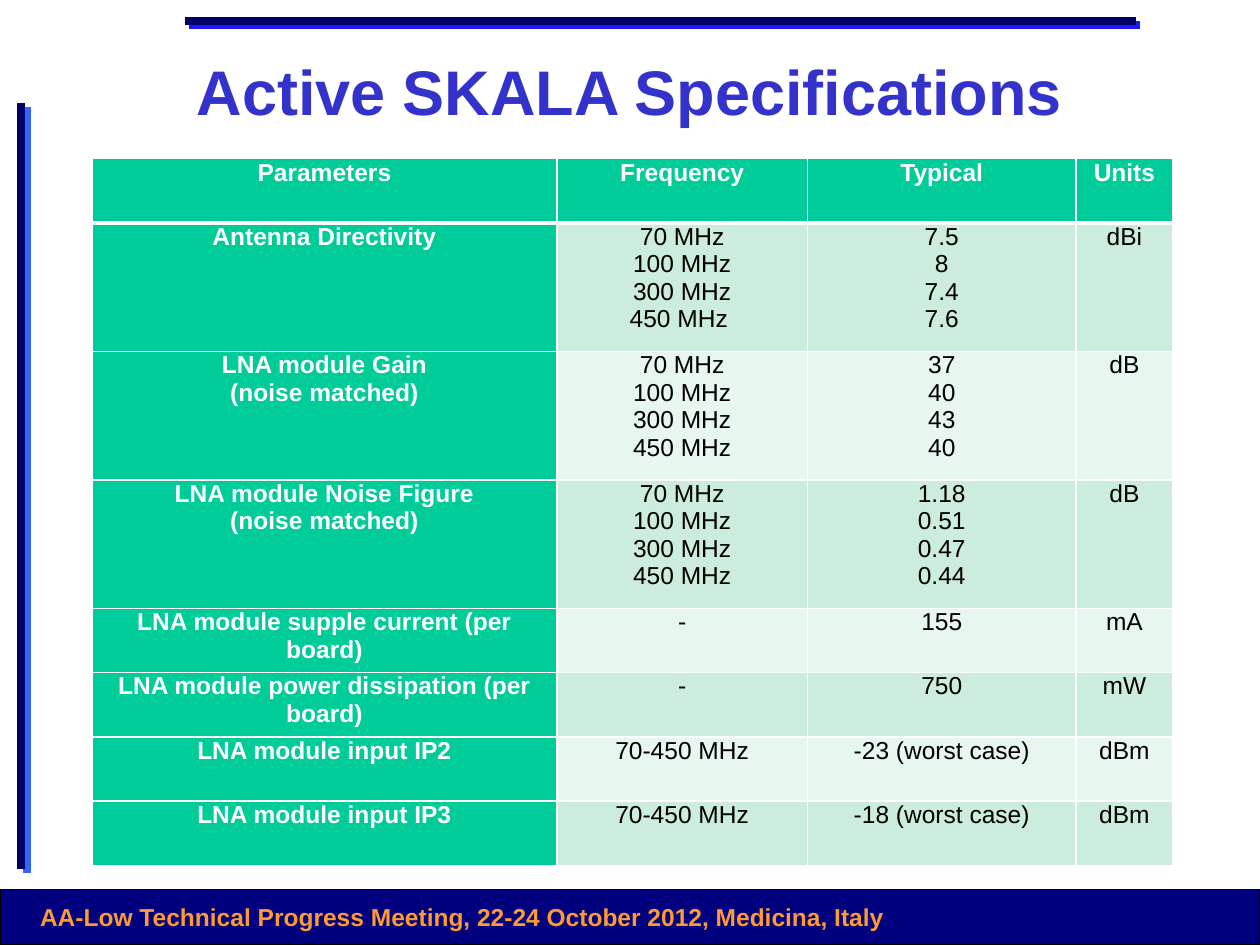
from dataclasses import dataclass

from lxml import etree
from pptx import Presentation
from pptx.dml.color import RGBColor
from pptx.enum.shapes import MSO_CONNECTOR, MSO_SHAPE
from pptx.enum.text import MSO_ANCHOR, PP_ALIGN
from pptx.oxml.ns import qn
from pptx.util import Inches, Pt

CENTER, LEFT = PP_ALIGN.CENTER, PP_ALIGN.LEFT
MIDDLE = MSO_ANCHOR.MIDDLE
RECT, STRAIGHT = MSO_SHAPE.RECTANGLE, MSO_CONNECTOR.STRAIGHT
FONT = "Arial"
WHITE, BLACK, GREEN = "FFFFFF", "000000", "00CC99"
BANDS = ("CCECDE", "E7F6EF")
COL_WIDTHS = (3.69, 1.99, 2.13, 0.77)
SHORT_ROW, TALL_ROW = 0.51, 1.02
FREQS = "70 MHz\n100 MHz\n300 MHz\n450 MHz"


@dataclass
class Rule:
    start: tuple[float, float]
    end: tuple[float, float]
    shadow: str
    dist: float
    angle: int


@dataclass
class Spec:
    parameter: str
    frequency: str
    typical: str
    units: str


RULES = [
    Rule((0.17, 0.82), (0.17, 6.9), "3366FF", 3.6, 34),
    Rule((9.02, 0.17), (1.47, 0.17), "1819FF", 2.8, 45),
]
SPECS = [
    Spec("Parameters", "Frequency", "Typical", "Units"),
    Spec("Antenna Directivity", FREQS + " ", "7.5\n8\n7.4\n7.6", "dBi"),
    Spec("LNA module Gain\n(noise matched)", FREQS, "37\n40\n43\n40", "dB"),
    Spec("LNA module Noise Figure\n(noise matched)", FREQS,
         "1.18\n0.51\n0.47\n0.44", "dB"),
    Spec("LNA module supple current (per board)", "-", "155", "mA"),
    Spec("LNA module power dissipation (per board)", "-", "750", "mW"),
    Spec("LNA module input IP2", "70-450 MHz", "-23 (worst case)", "dBm"),
    Spec("LNA module input IP3", "70-450 MHz", "-18 (worst case)", "dBm"),
]


def rgb(value: str) -> RGBColor:
    return RGBColor.from_string(value)


def set_text(tf, text: str, size: int, color: str, bold: bool, align=CENTER) -> None:
    tf.text = text
    for p in tf.paragraphs:
        p.alignment = align
        for r in p.runs:
            r.font.name = FONT
            r.font.size = Pt(size)
            r.font.bold = bold
            r.font.color.rgb = rgb(color)


def add_rule(slide, rule: Rule) -> None:
    ends = [Inches(v) for v in rule.start + rule.end]
    line = slide.shapes.add_connector(STRAIGHT, *ends)
    line.line.color.rgb = rgb("000066")
    line.line.width = Pt(4.5)
    effects = etree.SubElement(line._element.spPr, qn("a:effectLst"))
    shadow = etree.SubElement(effects, qn("a:outerShdw"), dist=str(Pt(rule.dist)),
                              dir=str(rule.angle * 60000), algn="ctr", rotWithShape="0")
    etree.SubElement(shadow, qn("a:srgbClr"), val=rule.shadow)


def add_footer(slide) -> None:
    sp = slide.shapes.add_shape(RECT, 0, Inches(7.06), Inches(10), Inches(0.44))
    sp.shadow.inherit = False
    sp.fill.solid()
    sp.fill.fore_color.rgb = rgb("00007E")
    sp.line.color.rgb = rgb(BLACK)
    sp.line.width = Pt(0.75)
    box = slide.shapes.add_textbox(Inches(0.05), Inches(7.11), Inches(7.24), Inches(0.38))
    box.text_frame.word_wrap = True
    set_text(box.text_frame,
             "AA-Low Technical Progress Meeting, 22-24 October 2012, Medicina, Italy",
             14, "FF9933", True)


def add_title(slide) -> None:
    sp = slide.shapes.title
    sp.left, sp.top = Inches(1.46), Inches(0.28)
    sp.width, sp.height = Inches(7.6), Inches(0.88)
    sp.text_frame.vertical_anchor = MIDDLE
    set_text(sp.text_frame, "Active SKALA Specifications", 36, "3333CC", True, LEFT)


def set_borders(cell, top: float, bottom: float) -> None:
    tc_pr = cell._tc.get_or_add_tcPr()
    sides = {"a:lnL": 1, "a:lnR": 1, "a:lnT": top, "a:lnB": bottom}
    for i, (tag, width) in enumerate(sides.items()):
        ln = etree.Element(qn(tag), w=str(Pt(width)))
        fill = etree.SubElement(ln, qn("a:solidFill"))
        etree.SubElement(fill, qn("a:srgbClr"), val=WHITE)
        tc_pr.insert(i, ln)


def fill_cell(cell, text: str, row: int, col: int) -> None:
    heading = row == 0 or col == 0
    cell.margin_left = cell.margin_right = Inches(0.07)
    cell.margin_top = cell.margin_bottom = 0
    cell.fill.solid()
    cell.fill.fore_color.rgb = rgb(GREEN if heading else BANDS[(row - 1) % 2])
    set_borders(cell, 3 if row == 1 else 1, 3 if row == 0 else 1)
    set_text(cell.text_frame, text, 14, WHITE if heading else BLACK, heading)


def add_spec_table(slide, specs: list[Spec]) -> None:
    table = slide.shapes.add_table(len(specs), len(COL_WIDTHS), Inches(0.73), Inches(1.26),
                                   Inches(8.57), Inches(5.59)).table
    for column, width in zip(table.columns, COL_WIDTHS):
        column.width = Inches(width)
    for i, spec in enumerate(specs):
        table.rows[i].height = Inches(TALL_ROW if "\n" in spec.frequency else SHORT_ROW)
        values = (spec.parameter, spec.frequency, spec.typical, spec.units)
        for j, text in enumerate(values):
            fill_cell(table.cell(i, j), text, i, j)


def main() -> None:
    """Build the antenna specification slide."""
    prs = Presentation()
    prs.slide_width, prs.slide_height = Inches(10), Inches(7.5)
    slide = prs.slides.add_slide(prs.slide_layouts[5])
    for rule in RULES:
        add_rule(slide, rule)
    add_footer(slide)
    add_title(slide)
    add_spec_table(slide, SPECS)
    prs.save("out.pptx")


if __name__ == "__main__":
    main()
